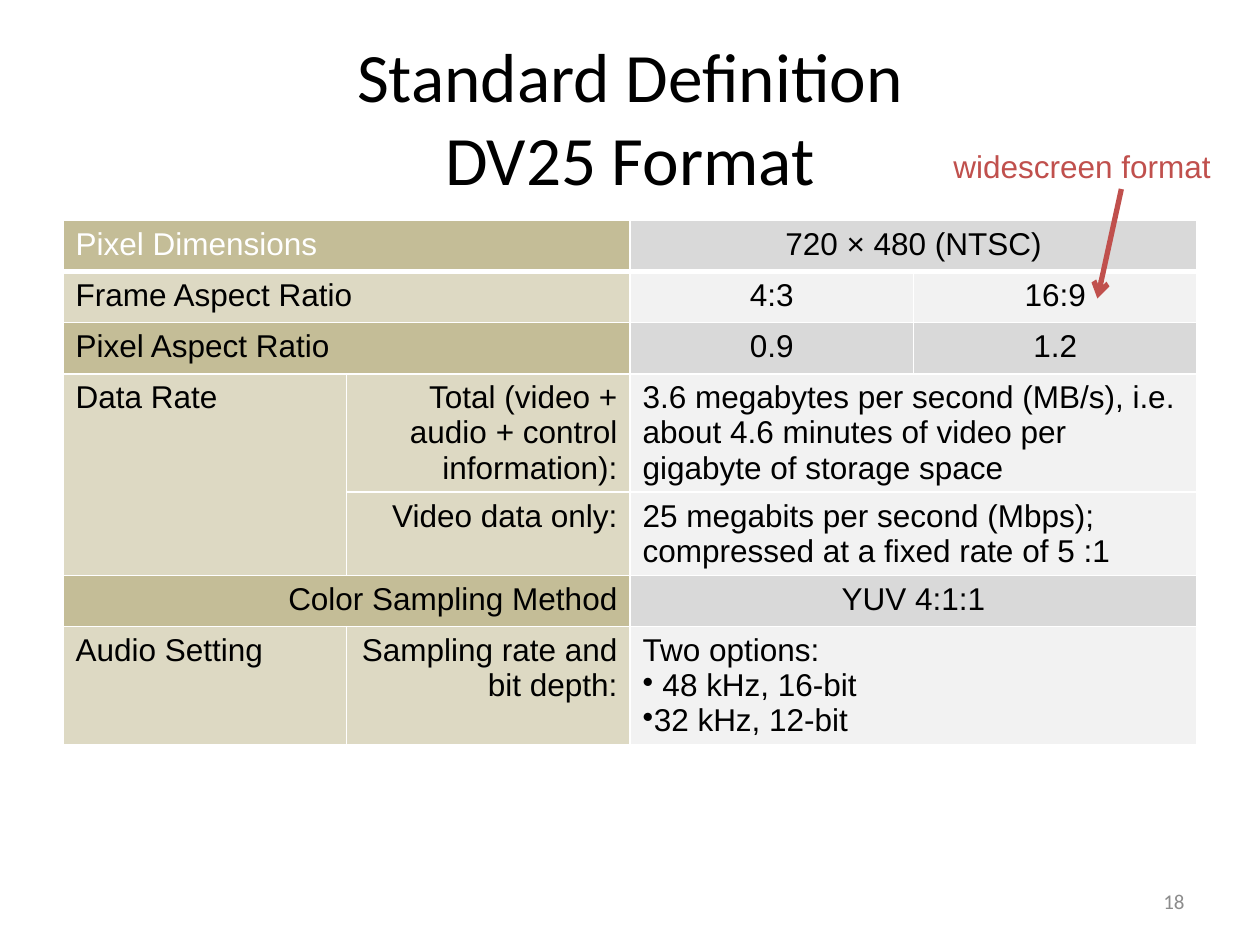
"""Build the slide on the standard definition DV25 video format."""
from copy import deepcopy
from dataclasses import dataclass

from pptx import Presentation
from pptx.dml.color import RGBColor
from pptx.enum import shapes, text
from pptx.oxml import ns, xmlchemy as xml
from pptx.util import Pt

LEFT, MID, RIGHT = text.PP_ALIGN.LEFT, text.PP_ALIGN.CENTER, text.PP_ALIGN.RIGHT


@dataclass(frozen=True)
class Theme:
    head: str = "Calibri"
    body: str = "Arial"
    big: float = 39.6
    size: float = 18
    small: float = 12
    ink: str = "000000"
    white: str = "FFFFFF"
    grey: str = "8C8C8C"
    red: str = "C0504D"
    label: tuple = ("DDD9C3", "C4BD97")
    value: tuple = ("F2F2F2", "D9D9D9")


T = Theme()
DARK_ROWS = {0, 2, 5}
ROW_H, COL_W = 29.2, 162
CELLS = [
    (0, 0, 1, 2, LEFT, "Pixel Dimensions"),
    (0, 2, 1, 2, MID, "720 × 480 (NTSC)"),
    (1, 0, 1, 2, LEFT, "Frame Aspect Ratio"),
    (1, 2, 1, 1, MID, "4:3"),
    (1, 3, 1, 1, MID, "16:9"),
    (2, 0, 1, 2, LEFT, "Pixel Aspect Ratio"),
    (2, 2, 1, 1, MID, "0.9"),
    (2, 3, 1, 1, MID, "1.2"),
    (3, 0, 2, 1, LEFT, "Data Rate"),
    (3, 1, 1, 1, RIGHT, "Total (video + audio + control information):"),
    (3, 2, 1, 2, LEFT, "3.6 megabytes per second (MB/s), i.e. about 4.6 minutes "
                       "of video per gigabyte of storage space"),
    (4, 1, 1, 1, RIGHT, "Video data only:"),
    (4, 2, 1, 2, LEFT, "25 megabits per second (Mbps);\ncompressed at a fixed rate of 5 :1"),
    (5, 0, 1, 2, RIGHT, "Color Sampling Method"),
    (5, 2, 1, 2, MID, "YUV 4:1:1"),
    (6, 0, 1, 1, LEFT, "Audio Setting"),
    (6, 1, 1, 1, RIGHT, "Sampling rate and bit depth:"),
    (6, 2, 1, 2, LEFT, "Two options:\n• 48 kHz, 16-bit\n•32 kHz, 12-bit"),
]


def rgb(code):
    """Turn a hex code into a colour."""
    return RGBColor.from_string(code)


def bullet(para):
    """Give a paragraph a bullet that sits flush with its text."""
    props = para._p.get_or_add_pPr()
    props.set("marL", "0")
    props.set("indent", "0")
    xml.OxmlElement  # noqa: B018
    mark = props.makeelement(ns.qn("a:buChar"), {"char": "•"})
    props.append(mark)


def write(frame, words, size=T.size, font=T.body, color=T.ink, align=LEFT):
    """Fill a text frame, one paragraph a line, with one format."""
    for i, line in enumerate(words.split("\n")):
        para = frame.add_paragraph() if i else frame.paragraphs[0]
        para.text = line.removeprefix("•")
        para.alignment = align
        if line.startswith("•"):
            bullet(para)
        for run in para.runs:
            run.font.size, run.font.name = Pt(size), font
            run.font.color.rgb = rgb(color)
        for gap in para._p.findall(ns.qn("a:br")):
            gap.append(deepcopy(para.runs[0]._r.rPr))


def place(shape, left, top, width, height):
    """Set the position and size of a shape."""
    shape.left, shape.top = Pt(left), Pt(top)
    shape.width, shape.height = Pt(width), Pt(height)


def label(slide, box, words, wrap=True, anchor=text.MSO_ANCHOR.TOP, **form):
    """Add a text box."""
    frame = slide.shapes.add_textbox(*map(Pt, box)).text_frame
    frame.word_wrap, frame.vertical_anchor = wrap, anchor
    write(frame, words, **form)


def edge(cell, row):
    """Draw white cell borders, thick below the first row."""
    props = cell._tc.get_or_add_tcPr()
    thick = {(0, "B"), (1, "T")}
    for side in "LRTB":
        width = Pt(3 if (row, side) in thick else 1)
        line = props.makeelement(ns.qn(f"a:ln{side}"), {"w": str(width)})
        fill = line.makeelement(ns.qn("a:solidFill"), {})
        fill.append(fill.makeelement(ns.qn("a:srgbClr"), {"val": T.white}))
        line.append(fill)
        props.append(line)


def grid(slide):
    """Add the table of format facts."""
    table = slide.shapes.add_table(7, 4, Pt(36), Pt(126), Pt(4 * COL_W), Pt(7 * ROW_H)).table
    table.first_row = table.horz_banding = False
    for col in table.columns:
        col.width = Pt(COL_W)
    for r, row in enumerate(table.rows):
        row.height = Pt(ROW_H)
        for c, cell in enumerate(row.cells):
            edge(cell, r)
            cell.fill.solid()
            tones = T.label if c < 2 else T.value
            cell.fill.fore_color.rgb = rgb(tones[r in DARK_ROWS])
    for r, c, down, wide, align, words in CELLS:
        cell = table.cell(r, c)
        if down * wide > 1:
            cell.merge(table.cell(r + down - 1, c + wide - 1))
        color = T.white if (r, c) == (0, 0) else T.ink
        write(cell.text_frame, words, color=color, align=align)


def arrow(slide, start, end):
    """Add a red line with an open arrowhead at its end."""
    line = slide.shapes.add_connector(
        shapes.MSO_CONNECTOR.STRAIGHT, *map(Pt, start + end))
    line.line.color.rgb, line.line.width = rgb(T.red), Pt(3)
    stroke = line.line._get_or_add_ln()
    stroke.append(stroke.makeelement(ns.qn("a:tailEnd"), {"type": "arrow"}))
    props = line._element.spPr
    props.append(props.makeelement(ns.qn("a:effectLst"), {}))


def main():
    """Build and save the slide."""
    deck = Presentation()
    deck.slide_width, deck.slide_height = Pt(720), Pt(540)
    slide = deck.slides.add_slide(deck.slide_layouts[5])
    title = slide.shapes.title
    place(title, 36, 21.6, 648, 90)
    title.text_frame.auto_size = text.MSO_AUTO_SIZE.NONE
    write(title.text_frame, "Standard Definition\vDV25 Format",
          size=T.big, font=T.head, align=MID)
    grid(slide)
    label(slide, (516, 500.5, 168, 28.75), "18", anchor=text.MSO_ANCHOR.MIDDLE,
          size=T.small, font=T.head, color=T.grey, align=RIGHT)
    arrow(slide, (640.8, 108), (627.1, 170.6))
    label(slide, (537.8, 80.6, 162.7, 29), "widescreen format", wrap=False, color=T.red)
    deck.save("out.pptx")


if __name__ == "__main__":
    main()
